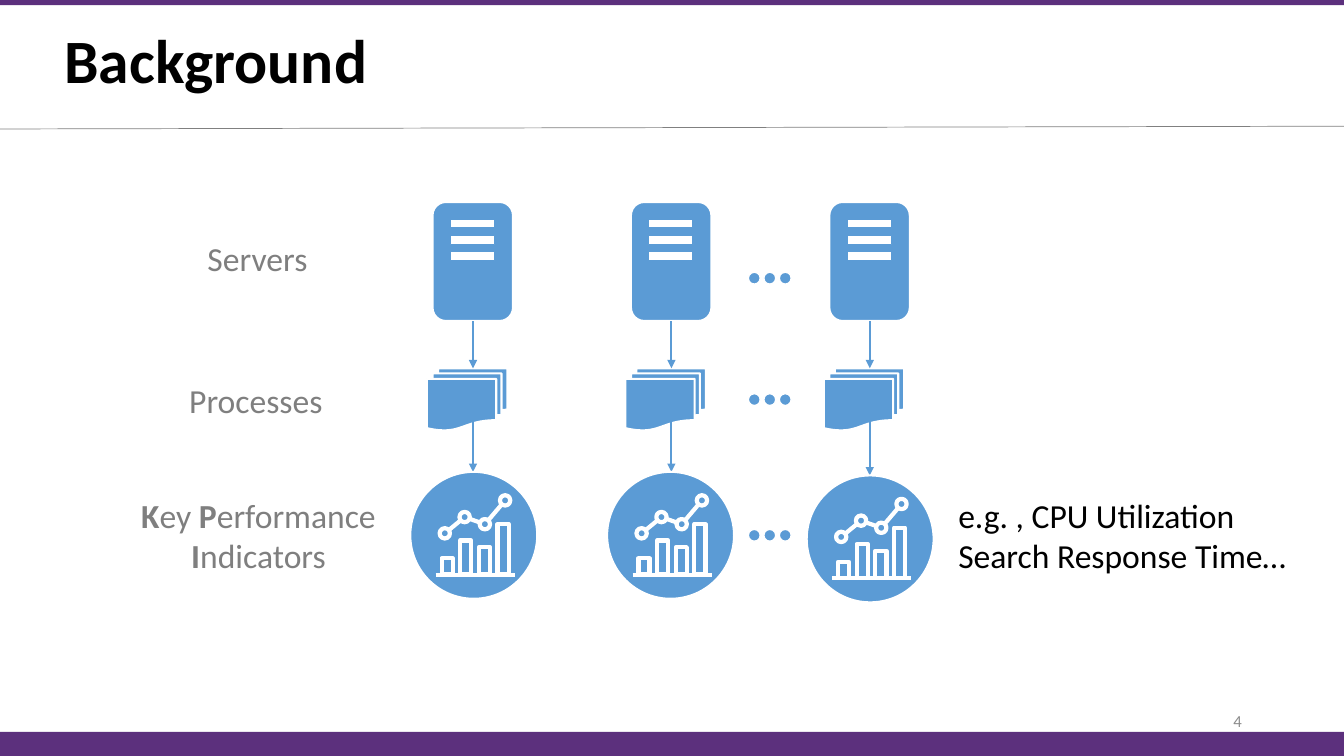
from pptx import Presentation
from pptx.dml.color import RGBColor
from pptx.enum import shapes, text
from pptx.oxml import ns
from pptx.util import Cm, Pt
from lxml import etree

COLORS = {"purple": "5C307D", "blue": "5B9BD5", "white": "FFFFFF", "black": "000000",
          "label": "7F7F7F", "rule": "808080", "number": "8C8C8C"}
PRESET = shapes.MSO_SHAPE
ALIGN = text.PP_ALIGN
WIDTH, HEIGHT = 33.87, 19.05


def color(name):
    return RGBColor.from_string(COLORS[name])


def write(frame, paragraphs, size=24, fill="label", bold=False, align=ALIGN.LEFT,
          anchor=text.MSO_ANCHOR.TOP, wrap=False, spacing=None):
    frame.word_wrap = wrap
    frame.auto_size = text.MSO_AUTO_SIZE.NONE
    frame.vertical_anchor = anchor
    for index, runs in enumerate(paragraphs):
        paragraph = frame.paragraphs[0] if index == 0 else frame.add_paragraph()
        paragraph.alignment = align
        paragraph.line_spacing = spacing
        for words, strong in runs:
            run = paragraph.add_run()
            run.text = words
            run.font.name = "Calibri"
            run.font.size = Pt(size)
            run.font.bold = bold or strong
            run.font.color.rgb = color(fill)


def label(parent, box, paragraphs, **style):
    caption = parent.add_textbox(*map(Cm, box))
    write(caption.text_frame, paragraphs, **style)


def block(parent, preset, box, fill=None, line=None, weight=1.0):
    part = parent.add_shape(preset, *map(Cm, box))
    part.shadow.inherit = False
    if fill:
        part.fill.solid()
        part.fill.fore_color.rgb = color(fill)
    else:
        part.fill.background()
    if line:
        part.line.color.rgb = color(line)
        part.line.width = Pt(weight)
    else:
        part.line.fill.background()


def stroke(parent, start, end, line, weight, arrow=False):
    link = parent.add_connector(shapes.MSO_CONNECTOR.STRAIGHT, *map(Cm, (*start, *end)))
    link.line.color.rgb = color(line)
    link.line.width = Pt(weight)
    if arrow:
        etree.SubElement(link.line._get_or_add_ln(), ns.qn("a:tailEnd"), type="triangle")
    etree.SubElement(link._element.spPr, ns.qn("a:effectLst"))


def page_frame(slide):
    title = slide.shapes.title
    title.left, title.top, title.width, title.height = map(Cm, (1.37, 0.08, 11.15, 3.05))
    write(title.text_frame, [[("Background", True)]], size=44, fill="black",
          anchor=text.MSO_ANCHOR.MIDDLE, wrap=True, spacing=0.9)
    for top, height in ((0, 0.13), (18.44, 0.61)):
        block(slide.shapes, PRESET.RECTANGLE, (0, top, WIDTH, height), fill="purple")
    stroke(slide.shapes, (0, 3.25), (WIDTH, 3.18), "rule", 0.5)
    label(slide.shapes, (23.93, 17.65, 7.62, 1.02), [[("4", False)]], size=12, fill="number",
          align=ALIGN.RIGHT, anchor=text.MSO_ANCHOR.MIDDLE, wrap=True)


def row_labels(slide):
    label(slide.shapes, (4.98, 5.87, 3.15, 1.27), [[("Servers", False)]])
    label(slide.shapes, (4.52, 9.45, 4.06, 1.27), [[("Processes", False)]])
    label(slide.shapes, (3.1, 12.34, 6.83, 2.31),
          [[("K", True), ("ey ", False), ("P", True), ("erformance", False)],
           [("I", True), ("ndicators", False)]], align=ALIGN.CENTER)
    label(slide.shapes, (23.9, 12.34, 8.86, 2.31),
          [[("e.g. , CPU Utilization", False)], [("Search Response Time…", False)]],
          fill="black")


def server(parent, left, top):
    block(parent, PRESET.ROUNDED_RECTANGLE, (left, top, 2.03, 3), "blue", "white", 1.5)
    for drop in (0.43, 0.85, 1.24):
        block(parent, PRESET.RECTANGLE, (left + 0.45, top + drop, 1.12, 0.23), "white", "blue")


def indicator(parent, left, top):
    block(parent, PRESET.FLOWCHART_CONNECTOR, (left, top, 3.2, 3.2), "blue", "white", 1.5)
    base = top + 2.59
    stroke(parent, (left + 0.64, base), (left + 2.64, base), "white", 3)
    for index, height in enumerate((0.41, 0.86, 0.69, 1.27)):
        block(parent, PRESET.FLOWCHART_PROCESS,
              (left + 0.79 + 0.47 * index, base - height, 0.28, height), None, "white", 3)
    trend = [(left + x, top + y) for x, y in
             ((0.87, 1.55), (1.37, 1.14), (1.88, 1.32), (2.39, 0.72))]
    for start, end in zip(trend, trend[1:]):
        stroke(parent, start, end, "white", 3)
    for x, y in trend:
        block(parent, PRESET.FLOWCHART_CONNECTOR, (x - 0.13, y - 0.13, 0.26, 0.26),
              "blue", "white", 3)


def server_column(slide, left, top, indicator_left, indicator_top):
    center = left + 1.02
    server(slide.shapes, left, top)
    block(slide.shapes, PRESET.FLOWCHART_MULTIDOCUMENT, (left - 0.14, top + 4.19, 2.03, 1.57),
          "blue", "white", 1.5)
    stroke(slide.shapes, (center, top + 3), (center, top + 4.19), "blue", 1.5, arrow=True)
    stroke(slide.shapes, (center, top + 5), (center, indicator_top), "blue", 1.5, arrow=True)
    indicator(slide.shapes.add_group_shape().shapes, indicator_left, indicator_top)


def ellipsis_dots(slide, left, top):
    dots = slide.shapes.add_group_shape().shapes
    for index in range(3):
        block(dots, PRESET.FLOWCHART_CONNECTOR, (left + 0.39 * index, top, 0.3, 0.3),
              "blue", "white")


def main():
    deck = Presentation()
    deck.slide_width, deck.slide_height = Cm(WIDTH), Cm(HEIGHT)
    slide = deck.slides.add_slide(deck.slide_layouts[5])
    page_frame(slide)
    row_labels(slide)
    for index, (left, top) in enumerate(((10.34, 11.89), (15.3, 11.89), (20.33, 11.98))):
        server_column(slide, 10.9 + 5 * index, 5.09, left, top)
    for top in (6.86, 9.92, 13.34):
        ellipsis_dots(slide, 18.86, top)
    deck.save("out.pptx")


if __name__ == "__main__":
    main()
